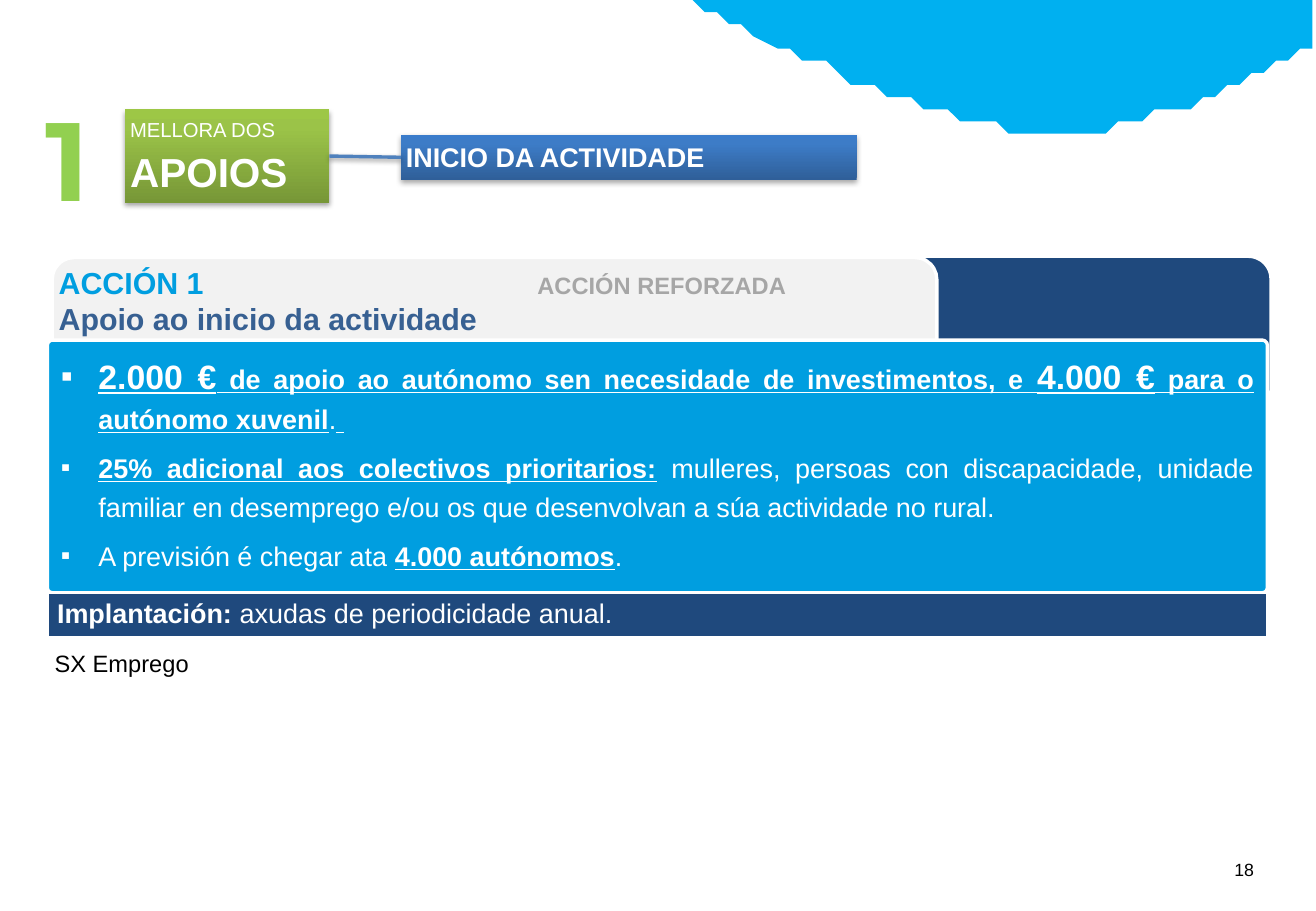
from dataclasses import dataclass

from lxml.etree import SubElement
from pptx import Presentation
from pptx.dml.color import RGBColor
from pptx.enum.shapes import MSO_CONNECTOR, MSO_SHAPE
from pptx.enum.text import MSO_ANCHOR, PP_ALIGN
from pptx.oxml import parse_xml
from pptx.oxml.ns import nsdecls, qn
from pptx.util import Inches, Pt

CELL = Inches(0.1)  # side of one grid cell
COLUMNS, ROWS = 108.3, 75

WHITE, BLACK, NAVY, BLUE = "FFFFFF", "000000", "1F497D", "009EE0"
GREEN_GRADIENT = ((0, "779737"), (80, "9BC348"), (100, "9DC746"))
BLUE_GRADIENT = ((0, "2F5F99"), (80, "3D7CC7"), (100, "3A7CCB"))
TAG_INSETS = (0.4, 0.5, 0.4, 0.5)
BAR_INSETS = (0.8, 0, 0.8, 0.4)


def cells(count):
    return round(count * CELL)


def color(value):
    return RGBColor.from_string(value)


def bezier(points, steps=24):
    """Points along a cubic curve, without its first point."""
    for step in range(1, steps + 1):
        t = step / steps
        weights = ((1 - t) ** 3, 3 * t * (1 - t) ** 2, 3 * t * t * (1 - t), t ** 3)
        yield tuple(sum(w * p[axis] for w, p in zip(weights, points)) for axis in (0, 1))


@dataclass
class Run:
    text: str
    size: float = 16
    color: str = WHITE
    bold: bool = False
    underline: bool = False
    font: str = "Arial"


class SlideBuilder:
    def __init__(self, presentation):
        self.slide = presentation.slides.add_slide(presentation.slide_layouts[6])
        self.shapes = self.slide.shapes

    def box(self, left, top, width, height, kind=MSO_SHAPE.RECTANGLE, fill=None, outline=WHITE):
        shape = self.shapes.add_shape(kind, *map(cells, (left, top, width, height)))
        shape.shadow.inherit = False
        if fill:
            shape.fill.solid()
            shape.fill.fore_color.rgb = color(fill)
        else:
            shape.fill.background()
        shape.line.color.rgb = color(outline)
        shape.line.width = Pt(2)
        return shape

    def tag(self, left, top, width, height, gradient):
        """Box with an upward gradient, no outline and a soft shadow."""
        shape = self.box(left, top, width, height)
        shape.line.fill.background()
        stops = "".join(f'<a:gs pos="{share * 1000}"><a:srgbClr val="{tone}"/></a:gs>'
                        for share, tone in gradient)
        properties = shape._element.spPr
        properties.replace(properties.find(qn("a:noFill")), parse_xml(
            f'<a:gradFill rotWithShape="1" {nsdecls("a")}><a:gsLst>{stops}</a:gsLst>'
            '<a:lin ang="16200000" scaled="0"/></a:gradFill>'))
        self.cast_shadow(shape, 35, 1.8)
        return shape

    def cast_shadow(self, shape, opacity, distance):
        properties = shape._element.spPr
        for effects in properties.findall(qn("a:effectLst")):
            properties.remove(effects)
        properties.append(parse_xml(
            f'<a:effectLst {nsdecls("a")}><a:outerShdw blurRad="{Pt(3.1)}" '
            f'dist="{Pt(distance)}" dir="5400000" rotWithShape="0"><a:srgbClr val="{BLACK}">'
            f'<a:alpha val="{opacity * 1000}"/></a:srgbClr></a:outerShdw></a:effectLst>'))

    def link(self, start, end, tone):
        """Line from the right side of one box to the left side of another."""
        line = self.shapes.add_connector(MSO_CONNECTOR.STRAIGHT, 0, 0, 0, 0)
        line.begin_connect(start, 3)
        line.end_connect(end, 1)
        line.line.color.rgb = color(tone)
        line.line.width = Pt(2)
        self.cast_shadow(line, 38, 1.6)

    def outline(self, points, fill):
        builder = self.shapes.build_freeform(*points[0], scale=CELL)
        builder.add_line_segments(points[1:], close=True)
        shape = builder.convert_to_shape()
        shape.shadow.inherit = False
        shape.fill.solid()
        shape.fill.fore_color.rgb = color(fill)
        shape.line.fill.background()

    def label(self, left, top, width, height, run, wrap=True):
        shape = self.shapes.add_textbox(*map(cells, (left, top, width, height)))
        self.add_text(shape, [[run]], wrap=wrap)

    def add_text(self, shape, paragraphs, insets=(1, 0.5, 1, 0.5), anchor=MSO_ANCHOR.TOP,
                 wrap=True, spacing=None, after=None, bullet=None, tab=None):
        frame = shape.text_frame
        frame.word_wrap = wrap
        frame.vertical_anchor = anchor
        (frame.margin_left, frame.margin_top,
         frame.margin_right, frame.margin_bottom) = map(cells, insets)
        for index, runs in enumerate(paragraphs):
            paragraph = frame.add_paragraph() if index else frame.paragraphs[0]
            properties = paragraph._p.get_or_add_pPr()
            if bullet:
                indent = cells(3.1)
                properties.set("marL", str(indent))
                properties.set("indent", str(-indent))
                SubElement(properties, qn("a:buFont"), typeface="Arial")
                SubElement(properties, qn("a:buChar"), char=bullet)
            if tab:
                stops = SubElement(properties, qn("a:tabLst"))
                SubElement(stops, qn("a:tab"), pos=str(cells(tab)), algn="l")
            paragraph.alignment = PP_ALIGN.JUSTIFY if bullet else PP_ALIGN.LEFT
            if spacing:
                paragraph.line_spacing = spacing
            if after:
                paragraph.space_after = Pt(after)
            for item in runs:
                run = paragraph.add_run()
                run.text = item.text
                font = run.font
                font.name, font.size = item.font, Pt(item.size)
                font.bold, font.underline = item.bold, item.underline
                font.color.rgb = color(item.color)


def strong(text, size=16):
    return Run(text, size, bold=True, underline=True)


def main():
    presentation = Presentation()
    presentation.slide_width, presentation.slide_height = cells(COLUMNS), cells(ROWS)
    page = SlideBuilder(presentation)

    # Wave in the top corner and page number
    crest, trough, edge = (56.7, 0), (85.4, 10.9), (COLUMNS, 3.5)
    page.outline([crest,
                  *bezier((crest, (59.7, 1.9), (76.8, 10.3), trough)),
                  *bezier((trough, (94, 11.5), (104.5, 5.4), edge)),
                  (COLUMNS, 0)], "00B0F0")
    page.label(100.6, 70.2, 4.7, 2.8, Run("18", 10.5, BLACK))

    # Action header
    page.box(38.7, 21.1, 65.9, 11.2, MSO_SHAPE.ROUND_2_SAME_RECTANGLE, NAVY)
    header = page.box(4.3, 21.2, 72.8, 10.8, MSO_SHAPE.ROUND_2_SAME_RECTANGLE, "F2F2F2")
    page.add_text(header, [
        [Run("ACCIÓN 1", 18, BLUE, bold=True),
         Run("\tACCIÓN REFORZADA", 14, "A6A6A6", bold=True)],
        [Run("Apoio ao inicio da actividade", 18, "376092", bold=True)],
    ], insets=(0, 0, 0.8, 0.4), tab=39.4)

    # Measures
    measures = page.box(3.9, 28, 100.4, 20.8, MSO_SHAPE.ROUNDED_RECTANGLE, BLUE)
    measures.adjustments[0] = 0.02
    page.add_text(measures, [
        [strong("2.000 €", 20),
         strong(" de apoio ao autónomo sen necesidade de investimentos, e "),
         strong("4.000 €", 20), strong(" para o autónomo xuvenil"), Run("."), strong(" ")],
        [strong("25% adicional aos colectivos prioritarios:"),
         Run(" mulleres, persoas con discapacidade, unidade familiar en desemprego "
             "e/ou os que desenvolvan a súa actividade no rural.")],
        [Run("A previsión é chegar ata "), strong("4.000 autónomos"), Run(".")],
    ], spacing=1.2, after=6, bullet="▪")

    # Rollout bar and responsible body
    rollout = page.box(3.9, 48.8, 100.4, 3.7, fill=NAVY)
    page.add_text(rollout, [[Run("Implantación:", bold=True),
                             Run(" axudas de periodicidade anual.")]],
                  insets=BAR_INSETS, anchor=MSO_ANCHOR.MIDDLE, after=6)
    body = page.box(3.7, 52.5, 15.6, 4.5)
    page.add_text(body, [[Run("SX Emprego", 14, BLACK)]],
                  insets=BAR_INSETS, anchor=MSO_ANCHOR.MIDDLE, after=6)

    # Numbered title: support area linked to its stage
    page.label(2.8, 6.9, 8.2, 12.1,
               Run("1", 66, "92D050", bold=True, font="Montserrat"), wrap=False)
    area = page.tag(10.3, 9, 16.8, 7.7, GREEN_GRADIENT)
    page.add_text(area, [[Run("MELLORA DOS ", 12), Run("APOIOS", 24, bold=True)]],
                  insets=TAG_INSETS, spacing=1.1)
    stage = page.tag(33, 11.1, 37.5, 3.7, BLUE_GRADIENT)
    page.add_text(stage, [[Run("INICIO DA ACTIVIDADE", bold=True)]], insets=TAG_INSETS)
    page.link(area, stage, "4F81BD")

    presentation.save("out.pptx")


if __name__ == "__main__":
    main()
